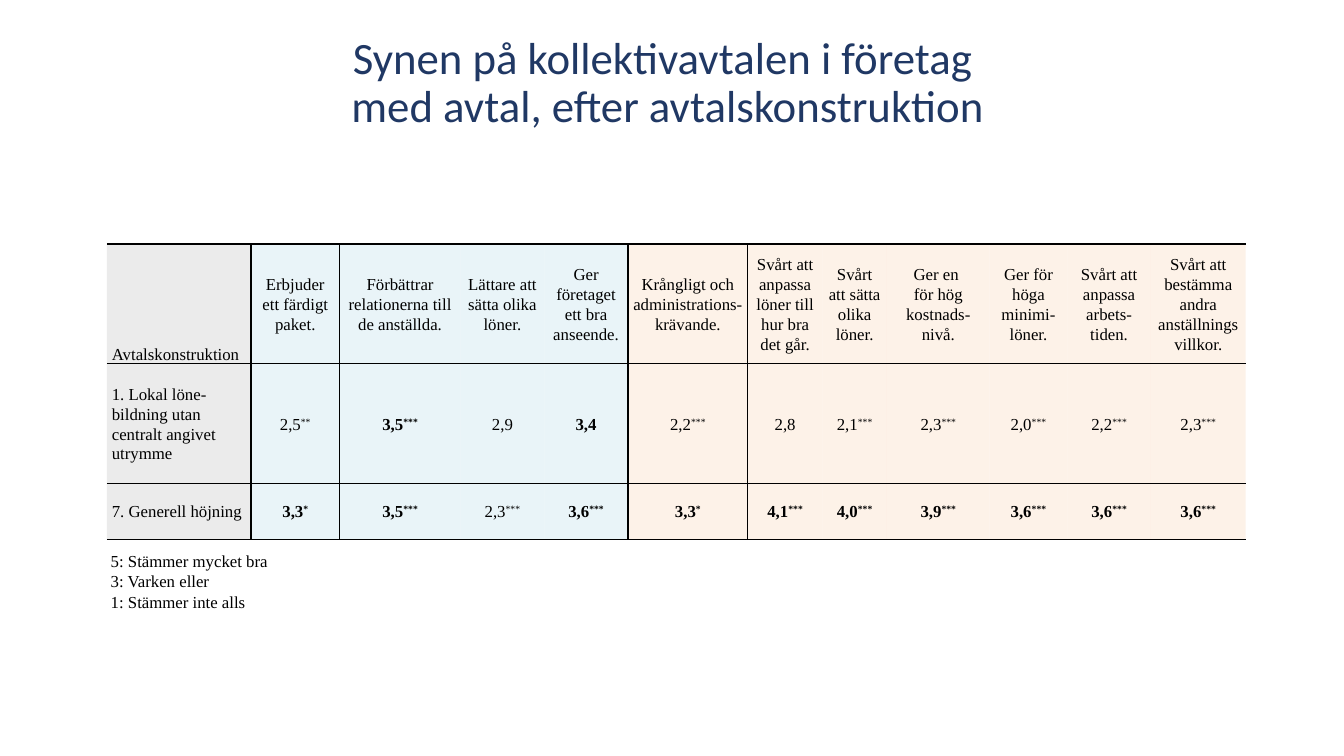
from typing import NamedTuple

from lxml import etree
from pptx import Presentation
from pptx.dml.color import RGBColor
from pptx.enum.text import MSO_ANCHOR, PP_ALIGN
from pptx.oxml.ns import qn
from pptx.util import Pt

LEFT, CENTER = PP_ALIGN.LEFT, PP_ALIGN.CENTER
MIDDLE, BOTTOM = MSO_ANCHOR.MIDDLE, MSO_ANCHOR.BOTTOM
BLACK = RGBColor(0, 0, 0)
NAVY = RGBColor(0x20, 0x38, 0x64)
GRAY = RGBColor(0x7F, 0x7F, 0x7F)
BLUE = RGBColor(0xDB, 0xEE, 0xF4)
PEACH = RGBColor(0xFD, 0xEA, 0xDA)
SERIF = "Times New Roman"
NO_STYLE = "{2D5ABB26-0587-4C30-8999-92F81FD0307C}"
BOLD_FROM = "3"  # means of 3 and above are bold
HEIGHTS = (85.68, 85.68, 39.6)


class Column(NamedTuple):
    width: float
    tint: RGBColor
    head: str
    local: str
    general: str


COLUMNS = (
    Column(102.96, GRAY, "Avtalskonstruktion",
           "1. Lokal löne-bildning utan centralt angivet utrymme",
           "7. Generell höjning"),
    Column(63.36, BLUE, "Erbjuder ett färdigt paket.", "2,5**", "3,3*"),
    Column(86.4, BLUE, "Förbättrar relationerna till de anställda.", "3,5***", "3,5***"),
    Column(59.76, BLUE, "Lättare att sätta olika löner.", "2,9", "2,3***"),
    Column(59.76, BLUE, "Ger företaget ett bra anseende.", "3,4", "3,6***"),
    Column(85.68, PEACH, "Krångligt och administrations-krävande.", "2,2***", "3,3*"),
    Column(53.28, PEACH, "Svårt att anpassa löner till hur bra det går.", "2,8", "4,1***"),
    Column(46.08, PEACH, "Svårt att sätta olika löner.", "2,1***", "4,0***"),
    Column(73.44, PEACH, "Ger en \nför hög kostnads-nivå.", "2,3***", "3,9***"),
    Column(55.44, PEACH, "Ger för höga minimi-\nlöner.", "2,0***", "3,6***"),
    Column(59.76, PEACH, "Svårt att anpassa arbets-\ntiden.", "2,2***", "3,6***"),
    Column(67.68, PEACH, "Svårt att bestämma andra anställningsvillkor.", "2,3***", "3,6***"),
)


def put(frame, text: str, *, size: float = 12, face: str = SERIF,
        color: RGBColor = BLACK, bold: bool = False, align=LEFT,
        spacing: float = 1, after: float = 0) -> None:
    """Write one paragraph a line; stars that end a line are raised."""
    for index, line in enumerate(text.split("\n")):
        par = frame.add_paragraph() if index else frame.paragraphs[0]
        par.alignment, par.line_spacing = align, spacing
        par.space_before, par.space_after = Pt(0), Pt(after)
        base = line.rstrip("*")
        par.text = base
        if base != line:
            stars = par.add_run()
            stars.text = line[len(base):]
            stars.font._element.set("baseline", "30000")
        for run in par.runs:
            font = run.font
            font.size, font.name, font.bold = Pt(size), face, bold
            font.color.rgb = color


def add_text(slide, box: tuple, text: str, **style) -> None:
    frame = slide.shapes.add_textbox(*map(Pt, box)).text_frame
    frame.word_wrap = True
    frame.vertical_anchor = MIDDLE
    put(frame, text, **style)


def paint(cell, tint: RGBColor, sides: str) -> None:
    """Fill a cell with a translucent tint and rule the given sides (of LRTB)."""
    cell.fill.solid()
    cell.fill.fore_color.rgb = tint
    props = cell._tc.get_or_add_tcPr()
    shade = props.find(".//" + qn("a:srgbClr"))
    alpha = 15000 if tint == GRAY else 60000
    etree.SubElement(shade, qn("a:alpha"), val=str(alpha))
    for index, side in enumerate(sides):
        line = etree.Element(qn("a:ln" + side), w=str(Pt(1)))
        fill = etree.SubElement(line, qn("a:solidFill"))
        etree.SubElement(fill, qn("a:srgbClr"), val=str(BLACK))
        props.insert(index, line)


def add_grid(slide) -> None:
    width = sum(col.width for col in COLUMNS)
    shape = slide.shapes.add_table(len(HEIGHTS), len(COLUMNS), Pt(76.32),
                                   Pt(174.24), Pt(width), Pt(sum(HEIGHTS)))
    table = shape.table
    table.first_row = table.horz_banding = False
    table._tbl.tblPr.find(qn("a:tableStyleId")).text = NO_STYLE
    for row, height in zip(table.rows, HEIGHTS):
        row.height = Pt(height)
    tints = [col.tint for col in COLUMNS]
    for c, col in enumerate(COLUMNS):
        table.columns[c].width = Pt(col.width)
        sides = "L" if c and tints[c - 1] != col.tint else ""
        sides += "R" if col.tint not in tints[c + 1:] and c + 1 < len(tints) else ""
        for r, text in enumerate((col.head, col.local, col.general)):
            cell = table.cell(r, c)
            value = r > 0 and c > 0
            cell.margin_left = cell.margin_right = Pt(4.32 if value else 3.6)
            cell.margin_top = cell.margin_bottom = Pt(0)
            cell.vertical_anchor = MIDDLE if r or c else BOTTOM
            put(cell.text_frame, text, align=CENTER if c else LEFT, spacing=1.07,
                bold=value and text >= BOLD_FROM, after=8 if value else 0)
            paint(cell, col.tint, sides + ("TB", "T", "B")[r])


def main() -> None:
    deck = Presentation()
    deck.slide_width, deck.slide_height = Pt(960), Pt(540)
    slide = deck.slides.add_slide(deck.slide_layouts[6])
    add_grid(slide)
    add_text(slide, (145.44, 21.6, 663.12, 77.04),
             "Synen på kollektivavtalen i företag \vmed avtal, efter avtalskonstruktion",
             size=32, face="Calibri", color=NAVY, align=CENTER, spacing=0.9)
    add_text(slide, (72, 384.48, 149.76, 61.2),
             "5: Stämmer mycket bra\n3: Varken eller\n1: Stämmer inte alls")
    deck.save("out.pptx")


if __name__ == "__main__":
    main()
